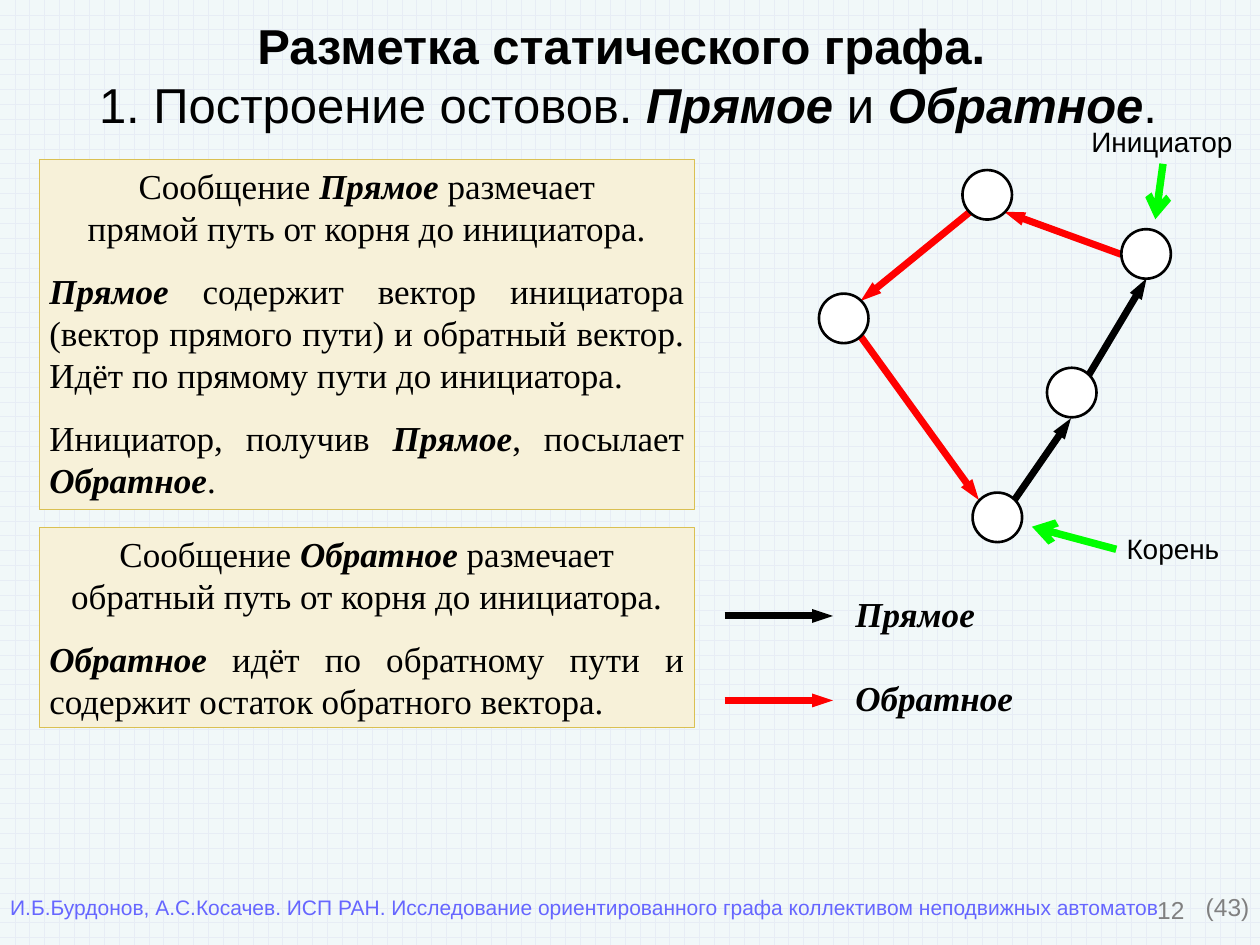
from pptx import Presentation
from pptx.dml.color import RGBColor
from pptx.enum import dml, shapes, text
from pptx.oxml import ns, xmlchemy
from pptx.util import Pt

COLORS = {
    "grid": "E7EDF5", "paper": "F1F8F9", "black": "000000", "white": "FFFFFF",
    "gray": "808080", "blue": "6666FF", "cream": "F7F1D9", "gold": "DAC052",
    "red": "FF0000", "green": "00FF00",
}
ALIGN = {"l": text.PP_ALIGN.LEFT, "c": text.PP_ALIGN.CENTER,
         "r": text.PP_ALIGN.RIGHT, "j": text.PP_ALIGN.JUSTIFY}
SERIF = "Times New Roman"


def rgb(name):
    return RGBColor.from_string(COLORS[name])


def write(shape, paragraphs, size=20, font="Arial", color="black", insets=(7.2, 3.6),
          wrap=False, grow=True, anchor=text.MSO_ANCHOR.TOP):
    frame = shape.text_frame
    frame.word_wrap = wrap
    frame.auto_size = text.MSO_AUTO_SIZE.SHAPE_TO_FIT_TEXT if grow else text.MSO_AUTO_SIZE.NONE
    frame.vertical_anchor = anchor
    frame.margin_left = frame.margin_right = Pt(insets[0])
    frame.margin_top = frame.margin_bottom = Pt(insets[1])
    for index, (align, after, bold, wording) in enumerate(paragraphs):
        paragraph = frame.add_paragraph() if index else frame.paragraphs[0]
        paragraph.alignment = ALIGN[align]
        paragraph.space_after = Pt(after)
        for part, piece in enumerate(wording.split("*")):
            if piece:
                run = paragraph.add_run()
                run.text = piece
                run.font.name = font
                run.font.size = Pt(size)
                run.font.color.rgb = rgb(color)
                run.font.italic = part % 2 == 1
                run.font.bold = bold or part % 2 == 1


deck = Presentation()
deck.slide_width, deck.slide_height = Pt(720), Pt(540)
slide = deck.slides.add_slide(deck.slide_layouts[6])
paper = slide.background.fill
paper.patterned()
paper.pattern = dml.MSO_PATTERN.HORIZONTAL_BRICK
paper.fore_color.rgb = rgb("grid")
paper.back_color.rgb = rgb("paper")

page_number = slide.shapes.add_textbox(Pt(516.2), Pt(507.6), Pt(167.8), Pt(37.4))
write(page_number, [("r", 0, False, "12")], size=14, color="gray", wrap=True, grow=False)

title = slide.shapes.add_textbox(Pt(14.4), Pt(1.4), Pt(689), Pt(82))
write(title, [("c", 0, True, "Разметка статического графа. "),
              ("c", 0, False, "1. Построение остовов. *Прямое* и *Обратное*.")],
      size=28, insets=(7.2, 7.2), wrap=True, anchor=text.MSO_ANCHOR.MIDDLE)

plain = {"insets": (0, 0)}
label = {"size": 16, "insets": (5.8, 2.9)}
legend = {"font": SERIF}
captions = [
    (689, 509.8, 25.2, 16.6, "(43)", {"size": 14, "color": "gray", **plain}),
    (5.8, 511.2, 661.7, 14.4, "И.Б.Бурдонов, А.С.Косачев. ИСП РАН. Исследование "
     "ориентированного графа коллективом неподвижных автоматов",
     {"size": 12, "color": "blue", **plain}),
    (637.9, 301, 65.5, 25.2, "Корень", label),
    (617.8, 68.4, 92.9, 25.2, "Инициатор", label),
    (481.7, 334.8, 85, 31.7, "*Прямое*", legend),
    (481.7, 383, 105, 31.7, "*Обратное*", legend),
]
for left, top, width, height, wording, style in captions:
    caption = slide.shapes.add_textbox(Pt(left), Pt(top), Pt(width), Pt(height))
    write(caption, [("l", 0, False, wording)], **style)

messages = [
    (91.2, 199.8, [
        ("c", 0, False, "Сообщение *Прямое *размечает"),
        ("c", 12, False, "прямой путь от корня до инициатора."),
        ("j", 12, False, "*Прямое* содержит вектор инициатора (вектор прямого пути) "
         "и обратный вектор. Идёт по прямому пути до инициатора."),
        ("j", 12, False, "Инициатор, получив *Прямое*, посылает *Обратное*."),
    ]),
    (301.2, 114.4, [
        ("c", 0, False, "Сообщение *Обратное *размечает"),
        ("c", 12, False, "обратный путь от корня до инициатора."),
        ("j", 12, False, "*Обратное* идёт по обратному пути и содержит "
         "остаток обратного вектора."),
    ]),
]
for top, height, paragraphs in messages:
    message = slide.shapes.add_shape(shapes.MSO_SHAPE.RECTANGLE, Pt(22.4), Pt(top), Pt(374.4), Pt(height))
    message.shadow.inherit = False
    message.fill.solid()
    message.fill.fore_color.rgb = rgb("cream")
    message.line.color.rgb = rgb("gold")
    message.line.width = Pt(0.5)
    write(message, paragraphs, font=SERIF, insets=(5.8, 2.9), wrap=True)

arrows = [
    (622, 214.6, 655.2, 159.1, "black"),
    (579.6, 285.8, 612, 239, "black"),
    (640.8, 145.4, 573.8, 121, "red"),
    (554.4, 121, 491.8, 172, "red"),
    (491.8, 192.2, 559.4, 285.8, "red"),
    (414, 352, 476, 352, "black"),
    (414, 400.3, 476, 400.3, "red"),
    (637.9, 313.9, 589.7, 301, "green"),
    (664.6, 93.6, 660.2, 125.3, "green"),
]
for x1, y1, x2, y2, color in arrows:
    arrow = slide.shapes.add_connector(shapes.MSO_CONNECTOR.STRAIGHT, Pt(x1), Pt(y1), Pt(x2), Pt(y2))
    pointer = color == "green"
    arrow.line.color.rgb = rgb(color)
    arrow.line.width = Pt(4.25 if pointer else 4)
    head = xmlchemy.OxmlElement("a:tailEnd")
    head.set("type", "arrow" if pointer else "triangle")
    head.set("w", "med" if pointer else "sm")
    head.set("len", "med")
    properties = arrow.element.spPr
    properties.find(ns.qn("a:ln")).append(head)
    properties.append(xmlchemy.OxmlElement("a:effectLst"))

for left, top in [(555.8, 281.5), (598.3, 210.2), (640.8, 131), (550, 97.2), (468, 167.8)]:
    node = slide.shapes.add_shape(shapes.MSO_SHAPE.OVAL, Pt(left), Pt(top), Pt(28.3), Pt(28.3))
    node.shadow.inherit = False
    node.fill.solid()
    node.fill.fore_color.rgb = rgb("white")
    node.line.color.rgb = rgb("black")
    node.line.width = Pt(1.5)

deck.save("out.pptx")
